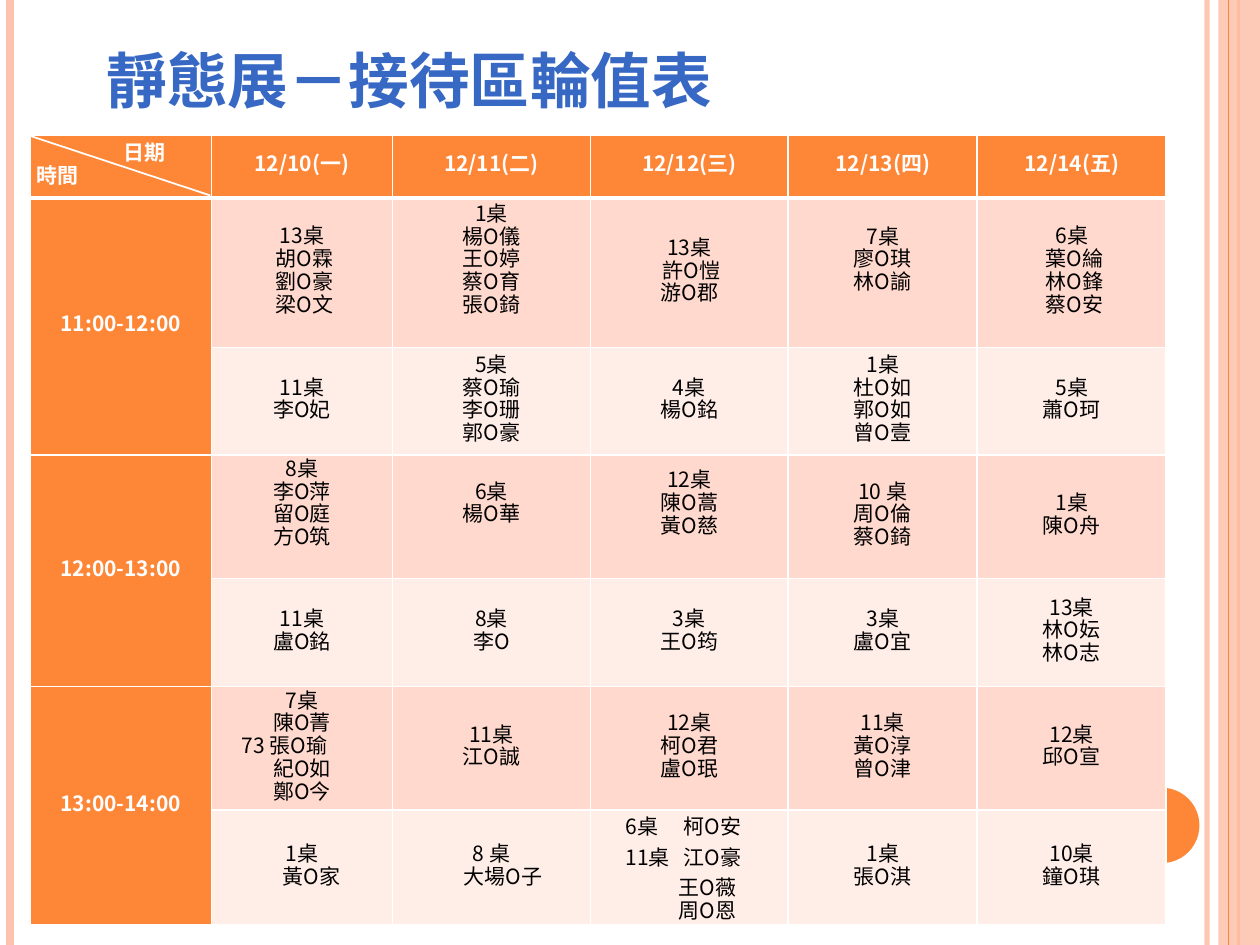
from dataclasses import dataclass

from lxml.etree import SubElement
from pptx import Presentation
from pptx.dml.color import RGBColor as Rgb
from pptx.enum.shapes import MSO_CONNECTOR as Connector, MSO_SHAPE as Shape
from pptx.enum.text import MSO_ANCHOR as Anchor, PP_ALIGN as Align
from pptx.oxml.ns import qn
from pptx.util import Cm, Pt


@dataclass(frozen=True)
class Theme:
    orange: str = "FE8637"
    peach: str = "FEC3AE"
    blue: str = "3668C4"
    white: str = "FFFFFF"
    black: str = "000000"
    band_dark: str = "FFD9CE"
    band_light: str = "FFEDE8"
    title_font: str = "Times New Roman"
    table_font: str = "Noto Sans CJK SC"
    title_size: float = 43.2
    table_size: float = 12
    leading: float = 13


HEADER = ["日期|時間", "12/10(一)", "12/11(二)", "12/12(三)", "12/13(四)", "12/14(五)"]
ROSTER = [
    ["11:00-12:00", "13桌|胡O霖|劉O豪|梁O文", "1桌|楊O儀|王O婷|蔡O育|張O錡",
     "13桌|許O愷|游O郡", "7桌|廖O琪|林O諭", "6桌|葉O綸|林O鋒|蔡O安"],
    ["", "11桌|李O妃", "5桌|蔡O瑜|李O珊|郭O豪",
     "4桌|楊O銘", "1桌|杜O如|郭O如|曾O壹", "5桌|蕭O珂"],
    ["12:00-13:00", "8桌|李O萍|留O庭|方O筑", "6桌|楊O華",
     "12桌|陳O蒿|黃O慈", "10 桌|周O倫|蔡O錡", "1桌|陳O舟"],
    ["", "11桌|盧O銘", "8桌|李O", "3桌|王O筠", "3桌|盧O宜", "13桌|林O妘|林O志"],
    ["13:00-14:00", "7桌|陳O菁|73 張O瑜|紀O如|鄭O今", "11桌|江O誠",
     "12桌|柯O君|盧O珉", "11桌|黃O淳|曾O津", "12桌|邱O宣"],
    ["", "1桌|黃O家", "8 桌|大場O子",
     "6桌\t柯O安|11桌\t江O豪|王O薇|周O恩", "1桌|張O淇", "10桌|鐘O琪"],
]
COLUMNS = [3.65, 3.65, 3.99, 3.99, 3.81, 3.81]
ROWS = [1.27, 3.02, 2.16, 2.49, 2.18, 2.49, 2.32]
OPEN_BELOW = {(1, 2), (1, 4), (3, 1), (3, 2), (3, 3)}

NUDGE = {"indent": 0.1}
HANGING = {"indent": 1.75, "first": -1.17, "alignment": Align.LEFT, "line_spacing": 1.0}
LINE_FORMATS = {
    **dict.fromkeys(["胡O霖", "劉O豪", "梁O文", "許O愷", "葉O綸", "林O鋒", "蔡O安"], NUDGE),
    "日期": {"indent": 0.95},
    "時間": {"alignment": Align.LEFT},
    "73 張O瑜": {"indent": 0.48, "alignment": Align.LEFT},
    "黃O家": {"indent": 0.38},
    "大場O子": {"indent": 0.48},
    "6桌\t柯O安": HANGING,
    "11桌\t江O豪": HANGING,
    "王O薇": {"indent": 1.65, "alignment": Align.LEFT, "line_spacing": 1.0},
    "周O恩": {"indent": 1.65, "alignment": Align.LEFT},
}


def apply(target, formats):
    for name, value in formats.items():
        setattr(target, name, value)


class SlideBuilder:
    def __init__(self, deck, theme):
        self.theme = theme
        self.page = deck.slides.add_slide(deck.slide_layouts[6])

    def fade(self, fill_parent, opacity):
        color = next(fill_parent.iter(qn("a:srgbClr")))
        SubElement(color, qn("a:alpha"), val=str(opacity * 1000))

    def line(self, start, end, color, width, opacity=100):
        points = [Cm(value) for value in (*start, *end)]
        line = self.page.shapes.add_connector(Connector.STRAIGHT, *points)
        line.line.color.rgb = Rgb.from_string(color)
        line.line.width = Pt(width)
        if opacity < 100:
            self.fade(line.line._ln, opacity)
        SubElement(line._element.spPr, qn("a:effectLst"))

    def shape(self, kind, bounds, color, opacity=100):
        shape = self.page.shapes.add_shape(kind, *map(Cm, bounds))
        shape.shadow.inherit = False
        shape.fill.solid()
        shape.fill.fore_color.rgb = Rgb.from_string(color)
        shape.line.fill.background()
        if opacity < 100:
            self.fade(shape._element.spPr, opacity)

    def span(self, para, text, color, **formats):
        span = para.add_run()
        span.text = text
        apply(span.font, formats)
        span.font.color.rgb = Rgb.from_string(color)
        SubElement(span.font._element, qn("a:ea"), typeface=self.theme.table_font)
        return span

    def title(self, text, bounds):
        theme = self.theme
        frame = self.page.shapes.add_textbox(*map(Cm, bounds)).text_frame
        apply(frame, {"word_wrap": True, "vertical_anchor": Anchor.BOTTOM})
        span = self.span(frame.paragraphs[0], text, theme.blue, name=theme.title_font,
                         size=Pt(theme.title_size), bold=True)
        span.font._element.set("cap", "small")

    def borders(self, cell, bottom):
        properties = cell._tc.get_or_add_tcPr()
        for side, width in {"lnL": 1, "lnR": 1, "lnT": 1, "lnB": bottom}.items():
            edge = SubElement(properties, qn(f"a:{side}"), w=str(Pt(width)))
            fill = SubElement(edge, qn("a:solidFill"))
            SubElement(fill, qn("a:srgbClr"), val=self.theme.white)

    def cell(self, cell, text, fill, heading, open_below, bottom):
        theme = self.theme
        self.borders(cell, bottom)
        cell.fill.solid()
        cell.fill.fore_color.rgb = Rgb.from_string(fill)
        apply(cell, {
            "vertical_anchor": Anchor.MIDDLE,
            "margin_left": Cm(0.13), "margin_right": Cm(0.13), "margin_top": 0,
            "margin_bottom": Pt(theme.leading) if open_below else 0,
        })
        frame = cell.text_frame
        for index, line in enumerate(text.split("|") if text else []):
            para = frame.add_paragraph() if index else frame.paragraphs[0]
            formats = {"alignment": Align.CENTER, "line_spacing": Pt(theme.leading),
                       **LINE_FORMATS.get(line, {})}
            indent, first = formats.pop("indent", 0), formats.pop("first", 0)
            apply(para, formats)
            properties = para._p.get_or_add_pPr()
            properties.set("marL", str(Cm(indent)))
            properties.set("indent", str(Cm(first)))
            self.span(para, line, theme.white if heading else theme.black,
                      name=theme.table_font, size=Pt(theme.table_size), bold=heading)

    def table(self, rows, left, top):
        theme = self.theme
        table = self.page.shapes.add_table(
            len(rows), len(COLUMNS), Cm(left), Cm(top),
            Cm(sum(COLUMNS)), Cm(sum(ROWS))).table
        apply(table, {"first_row": False, "horz_banding": False})
        for column, width in zip(table.columns, COLUMNS):
            column.width = Cm(width)
        for row, height in zip(table.rows, ROWS):
            row.height = Cm(height)
        for r, texts in enumerate(rows):
            for c, text in enumerate(texts):
                heading = r == 0 or c == 0
                band = theme.band_dark if r % 2 else theme.band_light
                self.cell(table.cell(r, c), text, theme.orange if heading else band,
                          heading, (r, c) in OPEN_BELOW, 1 if r else 3)
        for r in range(1, len(rows), 2):
            table.cell(r, 0).merge(table.cell(r + 1, 0))


def main():
    theme = Theme()
    deck = Presentation()
    deck.slide_width, deck.slide_height = Cm(25.4), Cm(19.05)
    slide = SlideBuilder(deck, theme)

    def stripe(x, color, width, opacity=100):
        slide.line((x, 0), (x, 19.05), color, width, opacity)

    stripe(24.33, theme.peach, 3, 93)
    stripe(0.2, theme.peach, 4.5)
    stripe(24.97, theme.orange, 1.5)
    slide.shape(Shape.RECTANGLE, (24.56, 0, 0.84, 19.05), theme.peach, 87)
    stripe(24.77, theme.orange, 0.75)
    slide.shape(Shape.OVAL, (22.66, 15.88, 1.52, 1.52), theme.orange)
    slide.title("靜態展－接待區輪值表", (1.9, 0.66, 20.75, 1.85))
    slide.table([HEADER, *ROSTER], 0.61, 2.72)
    slide.line((0.61, 2.74), (4.24, 3.94), theme.white, 1)
    deck.save("out.pptx")


if __name__ == "__main__":
    main()
